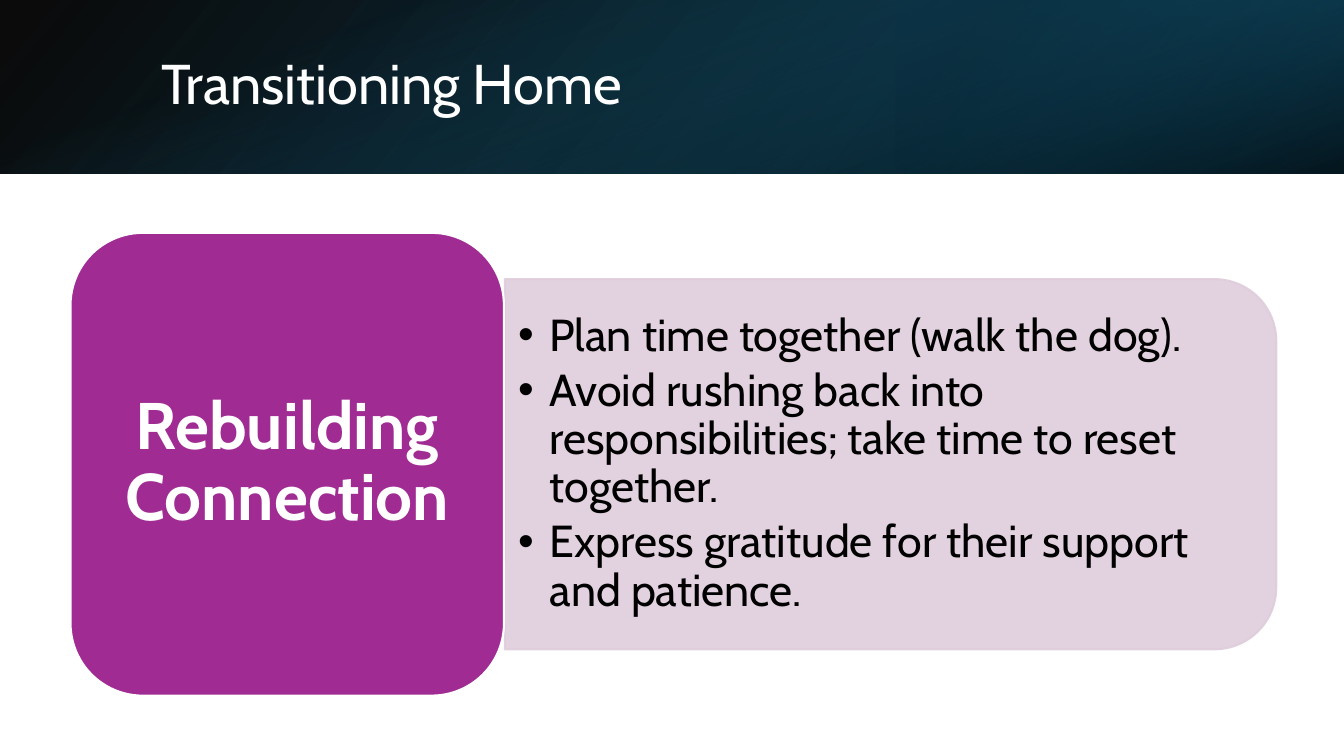
"""Builds the "Transitioning Home" slide on rebuilding connection."""
from lxml import etree
from pptx import Presentation
from pptx.dml.color import RGBColor
from pptx.enum.shapes import MSO_SHAPE
from pptx.enum.text import MSO_ANCHOR, PP_ALIGN
from pptx.oxml import parse_xml
from pptx.oxml.ns import qn
from pptx.util import Pt

RECT, CARD, PANEL = MSO_SHAPE.RECTANGLE, MSO_SHAPE.ROUNDED_RECTANGLE, MSO_SHAPE.ROUND_2_SAME_RECTANGLE
MIDDLE, LEFT, CENTER = MSO_ANCHOR.MIDDLE, PP_ALIGN.LEFT, PP_ALIGN.CENTER
FONT = "Cabin"
DRAWING_NS = "http://schemas.openxmlformats.org/drawingml/2006/main"
COLORS = {
    "black": "000000", "white": "FFFFFF", "purple": "A02B93", "mauve": "DFCDDC",
    "teal": "156082", "deep_teal": "104862", "dark_teal": "0B3041",
}

TITLE = "Transitioning Home"
TOPIC = "Rebuilding Connection"
ADVICE = [
    "Plan time together (walk the dog).",
    "Avoid rushing back into responsibilities; take time to reset together.",
    "Express gratitude for their support and patience.",
]

SLIDE_W, SLIDE_H, BANNER_H = 960, 540, 124
BANNER_LAYERS = [
    {"box": (0, 0, SLIDE_W, BANNER_H), "turn": 0, "flip": True, "angle": 140,
     "stops": [(0, "black", 96), (100, "deep_teal", 100)]},
    {"box": (640, 0, 320, BANNER_H), "turn": 180, "flip": True, "angle": 320,
     "stops": [(19, "dark_teal", 68), (100, "teal", 79)]},
    {"box": (0, 0, SLIDE_W, BANNER_H), "turn": 90, "flip": False, "angle": 340,
     "stops": [(23, "teal", 0), (99, "black", 74)]},
]
TITLE_BOX = (108, 27.4, 790.6, 69)
CARD_BOX = (50.4, 166.3, 309.6, 330.6)
TOPIC_BOX = (65.5, 181.4, 279.4, 300.3)
PANEL_BOX = (360.6, 199.4, 551, 264.4)
ADVICE_BOX = (360.6, 212.4, 538, 238.4)


def add_shape(slide, kind, box, turn=0):
    """Add a shadowless shape that covers the box after its turn."""
    left, top, width, height = box
    if turn == 90:
        left, top = left + (width - height) / 2, top + (height - width) / 2
        width, height = height, width
    shape = slide.shapes.add_shape(kind, Pt(left), Pt(top), Pt(width), Pt(height))
    shape.rotation = turn
    shape.shadow.inherit = False
    return shape


def add_banner_layer(slide, box, turn, flip, angle, stops):
    """Add one translucent gradient layer of the banner."""
    layer = add_shape(slide, RECT, box, turn)
    layer.line.fill.background()
    properties = layer._element.spPr
    if flip:
        properties.find(qn("a:xfrm")).set("flipH", "1")
    stop_xml = "".join(
        f'<a:gs pos="{position * 1000}"><a:srgbClr val="{COLORS[color]}">'
        f'<a:alpha val="{alpha * 1000}"/></a:srgbClr></a:gs>'
        for position, color, alpha in stops)
    properties.find(qn("a:prstGeom")).addnext(parse_xml(
        f'<a:gradFill xmlns:a="{DRAWING_NS}" rotWithShape="1"><a:gsLst>{stop_xml}</a:gsLst>'
        f'<a:lin ang="{angle * 60000}" scaled="0"/></a:gradFill>'))


def add_block(slide, kind, box, fill, line, turn=0, alpha=100):
    """Add a filled and outlined block."""
    block = add_shape(slide, kind, box, turn)
    block.fill.solid()
    block.fill.fore_color.rgb = RGBColor.from_string(COLORS[fill])
    block.line.color.rgb = RGBColor.from_string(COLORS[line])
    block.line.width = Pt(1.5)
    if alpha < 100:
        for color in block._element.spPr.iter(qn("a:srgbClr")):
            etree.SubElement(color, qn("a:alpha")).set("val", str(alpha * 1000))


def add_text(slide, lines, box, size, color, bold=False, align=LEFT,
             inset=(7.2, 3.6), after=0, indent=0):
    """Add a wrapped text box, with bullets when an indent is given."""
    frame = slide.shapes.add_textbox(*map(Pt, box)).text_frame
    frame.word_wrap = True
    frame.vertical_anchor = MIDDLE
    frame.margin_left = frame.margin_right = Pt(inset[0])
    frame.margin_top = frame.margin_bottom = Pt(inset[1])
    for number, line in enumerate(lines):
        paragraph = frame.add_paragraph() if number else frame.paragraphs[0]
        paragraph.alignment = align
        paragraph.line_spacing = 0.9
        paragraph.space_after = Pt(after)
        run = paragraph.add_run()
        run.text = line
        run.font.name, run.font.size, run.font.bold = FONT, Pt(size), bold
        run.font.color.rgb = RGBColor.from_string(COLORS[color])
        if indent:
            properties = paragraph._p.get_or_add_pPr()
            properties.set("marL", str(Pt(indent)))
            properties.set("indent", str(-Pt(indent)))
            etree.SubElement(properties, qn("a:buFont")).set("typeface", "Arial")
            etree.SubElement(properties, qn("a:buChar")).set("char", "•")


def main():
    """Build and save the slide."""
    deck = Presentation()
    deck.slide_width, deck.slide_height = Pt(SLIDE_W), Pt(SLIDE_H)
    slide = deck.slides.add_slide(deck.slide_layouts[6])
    for layer in BANNER_LAYERS:
        add_banner_layer(slide, **layer)
    add_text(slide, [TITLE], TITLE_BOX, 40, "white")
    add_block(slide, PANEL, PANEL_BOX, "mauve", "mauve", turn=90, alpha=90)
    add_text(slide, ADVICE, ADVICE_BOX, 32, "black", inset=(9.4, 5), after=4.5, indent=22.5)
    add_block(slide, CARD, CARD_BOX, "purple", "white")
    add_text(slide, [TOPIC], TOPIC_BOX, 47, "white", bold=True, align=CENTER, inset=(14.4, 7.2))
    deck.save("out.pptx")


if __name__ == "__main__":
    main()
